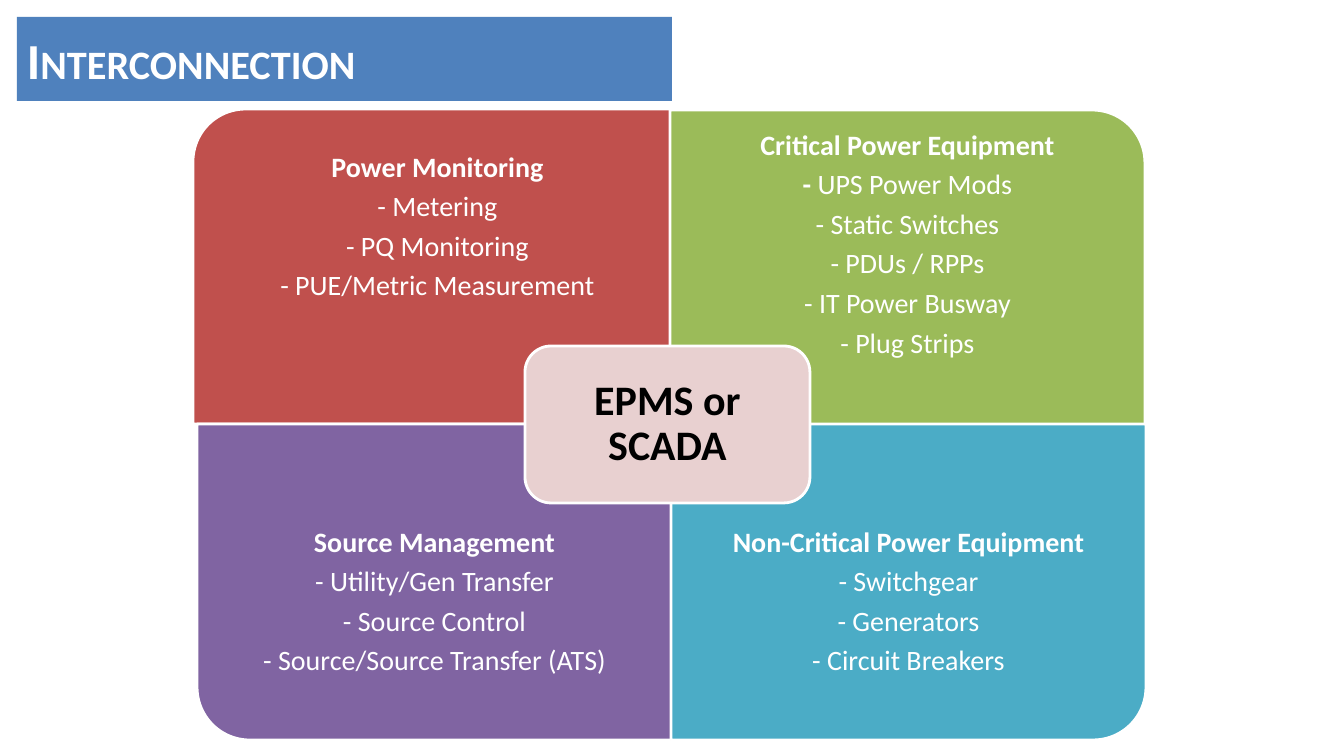
from pptx import Presentation
from pptx.dml.color import RGBColor
from pptx.enum.shapes import MSO_SHAPE
from pptx.enum.text import MSO_ANCHOR, MSO_AUTO_SIZE, PP_ALIGN
from pptx.util import Emu, Pt

COLOURS = {
    "white": "FFFFFF",
    "black": "000000",
    "blue": "4F81BD",
    "red": "C0504D",
    "green": "9BBB59",
    "purple": "8064A2",
    "teal": "4BACC6",
    "pink": "E8D0D0",
}
EMU_PER_PX = 914400 / 100.8

QUADRANTS = [
    ("red", 270, (193, 109, 489, 315), (193, 109, 489, 237),
     "Power Monitoring",
     ["- Metering", "- PQ Monitoring", "- PUE/Metric Measurement"]),
    ("green", 0, (670, 110, 475, 316), (670, 126, 475, 238),
     "Critical Power Equipment",
     ["- UPS Power Mods", "- Static Switches", "- PDUs / RPPs",
      "- IT Power Busway", "- Plug Strips"]),
    ("purple", 180, (197, 424, 475, 316), (197, 504, 475, 197),
     "Source Management",
     ["- Utility/Gen Transfer", "- Source Control",
      "- Source/Source Transfer (ATS)"]),
    ("teal", 90, (671, 424, 475, 316), (671, 504, 475, 197),
     "Non-Critical Power Equipment",
     ["- Switchgear", "- Generators", "- Circuit Breakers"]),
]


def px(length):
    return Emu(round(length * EMU_PER_PX))


def colour(name):
    return RGBColor.from_string(COLOURS[name])


def add_text(paragraph, text, size=20, bold=False, color="white", small_caps=False):
    run = paragraph.add_run()
    run.text = text
    run.font.name = "Calibri"
    run.font.size = Pt(size)
    run.font.bold = bold
    run.font.color.rgb = colour(color)
    if small_caps:
        run.font._element.set("cap", "small")


class SlideBuilder:
    def __init__(self, slide):
        self.slide = slide
        self.line_spacing = 0.9
        self.space_after = Pt(6.7)
        self.outline = Pt(2)

    def title(self, text, left, top, width, height):
        shape = self.slide.shapes.title
        shape.left, shape.top = px(left), px(top)
        shape.width, shape.height = px(width), px(height)
        shape.fill.solid()
        shape.fill.fore_color.rgb = colour("blue")
        self.frame(shape, 10)
        paragraph = shape.text_frame.paragraphs[0]
        paragraph.alignment = PP_ALIGN.LEFT
        add_text(paragraph, text, size=36, bold=True, small_caps=True)

    def frame(self, shape, inset):
        frame = shape.text_frame
        frame.word_wrap = True
        frame.auto_size = MSO_AUTO_SIZE.NONE
        frame.vertical_anchor = MSO_ANCHOR.MIDDLE
        frame.margin_left = frame.margin_right = px(inset)
        frame.margin_top = frame.margin_bottom = px(inset)
        return frame

    def panel(self, kind, fill, left, top, width, height, rotation=0):
        if rotation % 180:
            left += (width - height) / 2
            top -= (width - height) / 2
            width, height = height, width
        shape = self.slide.shapes.add_shape(
            kind, px(left), px(top), px(width), px(height))
        shape.rotation = rotation
        shape.shadow.inherit = False
        shape.fill.solid()
        shape.fill.fore_color.rgb = colour(fill)
        shape.line.color.rgb = colour("white")
        shape.line.width = self.outline
        return shape

    def centred(self, paragraph):
        paragraph.alignment = PP_ALIGN.CENTER
        paragraph.line_spacing = self.line_spacing
        return paragraph

    def topics(self, heading, items, left, top, width, height):
        shape = self.slide.shapes.add_textbox(
            px(left), px(top), px(width), px(height))
        frame = self.frame(shape, 0)
        for index, text in enumerate([heading] + items):
            paragraph = frame.add_paragraph() if index else frame.paragraphs[0]
            self.centred(paragraph).space_after = self.space_after
            if text == "- UPS Power Mods":
                add_text(paragraph, "-", bold=True)
                text = text[1:]
            add_text(paragraph, text, bold=index == 0)

    def hub(self, text, left, top, width, height):
        shape = self.panel(
            MSO_SHAPE.ROUNDED_RECTANGLE, "pink", left, top, width, height)
        frame = self.frame(shape, 20)
        add_text(self.centred(frame.paragraphs[0]), text,
                 size=30, bold=True, color="black")


def main():
    presentation = Presentation()
    presentation.slide_width = px(1344)
    presentation.slide_height = px(756)
    slide = presentation.slides.add_slide(presentation.slide_layouts[5])
    builder = SlideBuilder(slide)
    builder.title("Interconnection", 17, 17, 655, 84)
    for fill, rotation, panel_box, text_box, heading, items in QUADRANTS:
        builder.panel(MSO_SHAPE.ROUND_1_RECTANGLE, fill, *panel_box, rotation=rotation)
        builder.topics(heading, items, *text_box)
    builder.hub("EPMS or SCADA", 525, 346, 285, 157)
    presentation.save("out.pptx")


if __name__ == "__main__":
    main()
